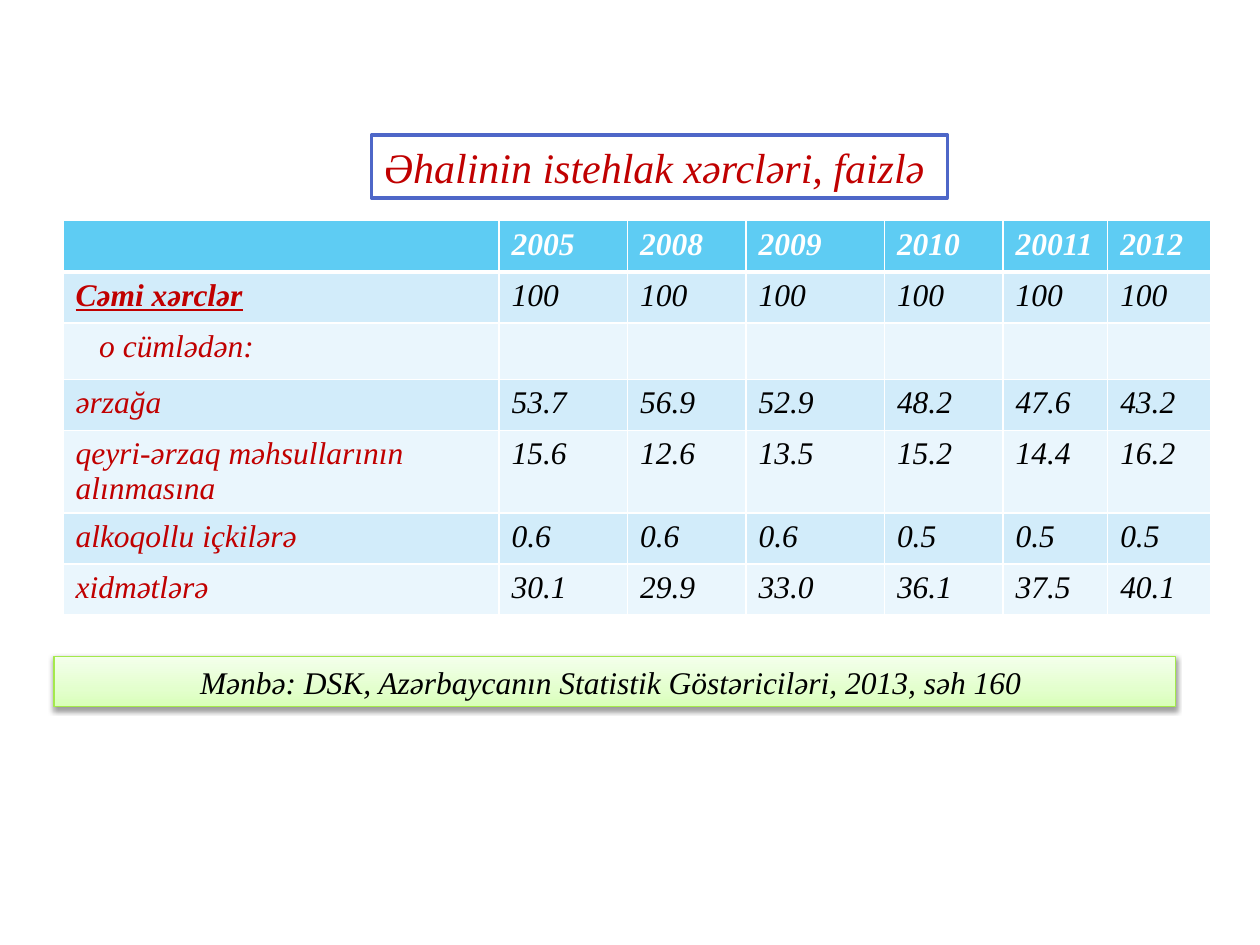
from pptx import Presentation
from pptx.util import Cm, Pt
from pptx.dml.color import RGBColor
from pptx.enum.shapes import MSO_SHAPE as Shp
from pptx.enum.text import PP_ALIGN as Al, MSO_AUTO_SIZE as Fit
from pptx.oxml import parse_xml
from pptx.oxml.ns import qn, nsdecls


def hue(code):
    return RGBColor.from_string(code)


def write(frame, text, size, code, bold=False, line=False, align=Al.LEFT):
    par = frame.paragraphs[0]
    par.alignment = align
    run = par.add_run()
    run.text = text
    font = run.font
    font.name, font.size, font.color.rgb = "Times New Roman", Pt(size), hue(code)
    font.bold, font.italic, font.underline = bold, True, line


prs = Presentation()
prs.slide_width, prs.slide_height = Cm(25.4), Cm(19.05)
slide = prs.slides.add_slide(prs.slide_layouts[6])

# Spending table
RED = "C00000"
rows = [
    ["", "2005", "2008", "2009", "2010", "20011", "2012"],
    ["Cəmi xərclər"] + ["100"] * 6,
    ["o cümlədən:"] + [""] * 6,
    ["ərzağa", "53.7", "56.9", "52.9", "48.2", "47.6", "43.2"],
    ["qeyri-ərzaq məhsullarının alınmasına",
     "15.6", "12.6", "13.5", "15.2", "14.4", "16.2"],
    ["alkoqollu içkilərə", "0.6", "0.6", "0.6", "0.5", "0.5", "0.5"],
    ["xidmətlərə", "30.1", "29.9", "33.0", "36.1", "37.5", "40.1"],
]
wide = [8.79, 2.59, 2.39, 2.79, 2.39, 2.11, 2.08]
high = [1.03, 1.03, 1.14, 1.03, 1.66, 1.03, 1.03]
table = slide.shapes.add_table(
    len(rows), len(wide), Cm(1.27), Cm(4.45), Cm(sum(wide)), Cm(sum(high))).table
for col, size in zip(table.columns, wide):
    col.width = Cm(size)
for row, size in zip(table.rows, high):
    row.height = Cm(size)

for i, texts in enumerate(rows):
    for j, text in enumerate(texts):
        cell = table.cell(i, j)
        cell.fill.solid()
        cell.fill.fore_color.rgb = hue(
            "5ECCF3" if i == 0 else "D2ECFA" if i % 2 else "EAF6FD")
        if text:
            code = "FFFFFF" if i == 0 else RED if j == 0 else "000000"
            total = (i, j) == (1, 0)
            write(cell.text_frame, text, 18, code, i == 0 or total, total)
        # White borders, thick under the header
        for k, side in enumerate("LRTB"):
            thick = (i, side) in ((0, "B"), (1, "T"))
            cell._tc.get_or_add_tcPr().insert(k, parse_xml(
                f'<a:ln{side} {nsdecls("a")} w="{Pt(3 if thick else 1)}">'
                '<a:solidFill><a:srgbClr val="FFFFFF"/></a:solidFill>'
                f'</a:ln{side}>'))
table.cell(2, 0).margin_left = Cm(0.73)

# Title and source boxes
boxes = [
    ((7.49, 2.72, 11.61, 1.27), "4E67C8", 2,
     "Əhalinin istehlak xərcləri, faizlə", 24, RED, Al.LEFT),
    ((1.09, 13.23, 22.61, 1.02), "A4E94C", 0.75,
     "Mənbə: DSK, Azərbaycanın Statistik Göstəriciləri, 2013, səh 160 ",
     18, "000000", Al.CENTER),
]
for place, edge, thick, text, size, code, align in boxes:
    box = slide.shapes.add_shape(Shp.RECTANGLE, *map(Cm, place))
    box.shadow.inherit = False
    box.fill.solid()
    box.fill.fore_color.rgb = hue("FFFFFF")
    box.line.color.rgb, box.line.width = hue(edge), Pt(thick)
    box.text_frame.word_wrap = True
    box.text_frame.auto_size = Fit.SHAPE_TO_FIT_TEXT
    write(box.text_frame, text, size, code, align=align)

# Green fade and soft shadow of the source box
box.fill.gradient()
box.fill.gradient_angle = 90
props = box._element.spPr
stops = props.find(qn("a:gradFill")).find(qn("a:gsLst"))
for stop in list(stops):
    stops.remove(stop)
for pos, code in ((0, "D8FFB8"), (35, "E3FFCD"), (100, "F4FFEC")):
    stops.append(parse_xml(
        f'<a:gs {nsdecls("a")} pos="{pos * 1000}"><a:srgbClr val="{code}"/></a:gs>'))
props.find(qn("a:effectLst")).append(parse_xml(
    f'<a:outerShdw {nsdecls("a")} blurRad="{Pt(3.1)}" dist="{Pt(1.6)}" '
    'dir="5400000" rotWithShape="0"><a:srgbClr val="000000">'
    '<a:alpha val="38000"/></a:srgbClr></a:outerShdw>'))

prs.save("out.pptx")
